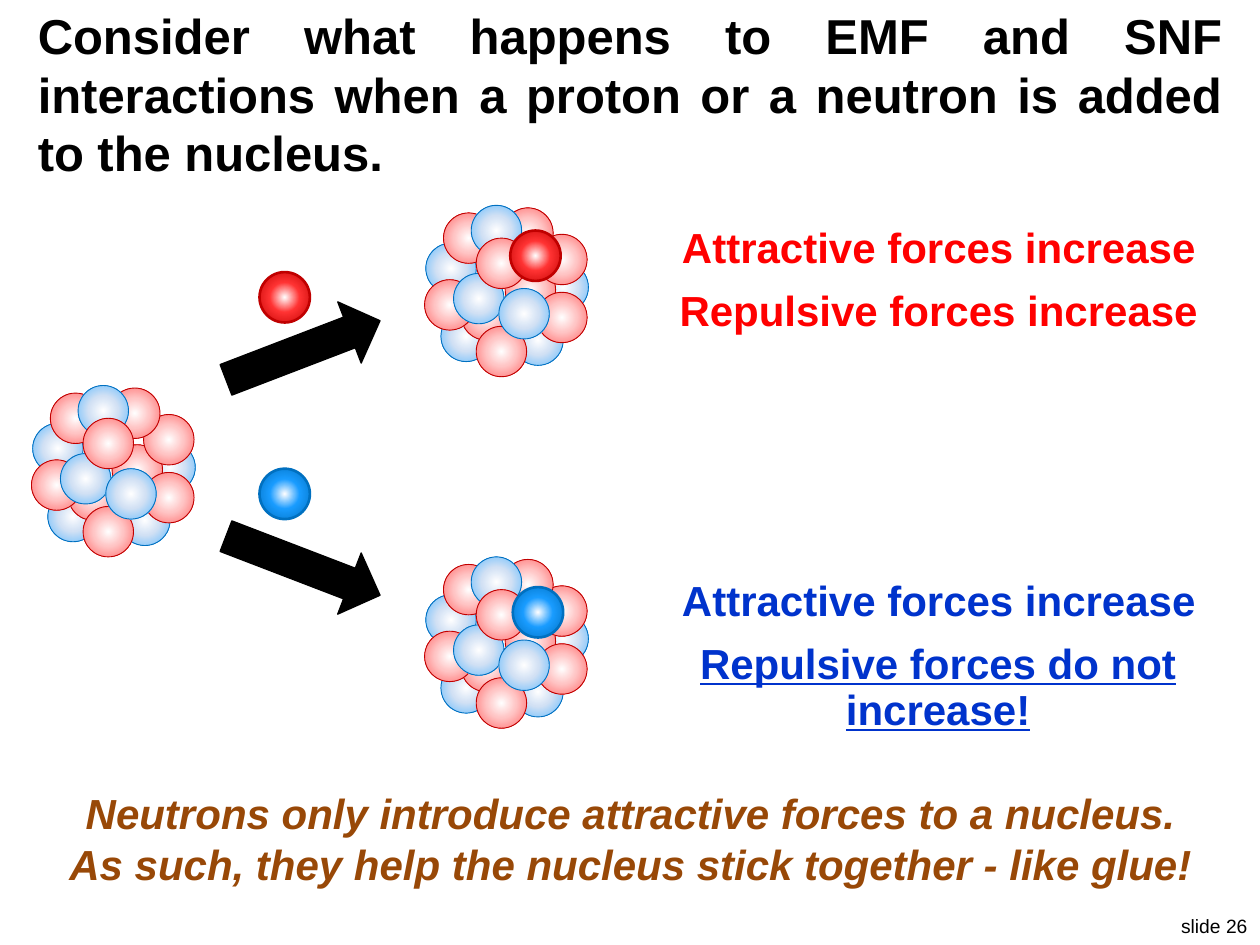
from collections import namedtuple

from lxml.etree import SubElement
from pptx import Presentation
from pptx.dml.color import RGBColor
from pptx.enum.shapes import MSO_SHAPE as Shape
from pptx.enum.text import MSO_ANCHOR as Anchor, MSO_AUTO_SIZE as AutoSize, PP_ALIGN as Align
from pptx.oxml.ns import qn
from pptx.util import Inches, Pt

BLACK = RGBColor(0x00, 0x00, 0x00)
WHITE = RGBColor(0xFF, 0xFF, 0xFF)
RED = RGBColor(0xFF, 0x00, 0x00)
BLUE = RGBColor(0x00, 0x33, 0xCC)
BROWN = RGBColor(0x98, 0x48, 0x07)
CORE_LINE = RGBColor(0x3A, 0x5F, 0x8C)
PROTON_LINE = RGBColor(0xC0, 0x00, 0x00)
NEUTRON_LINE = RGBColor(0x00, 0x70, 0xC0)
PALE_RED = RGBColor(0xFF, 0xC5, 0xC5)
SOFT_RED = RGBColor(0xFF, 0x65, 0x65)
BRIGHT_RED = RGBColor(0xFF, 0x33, 0x33)
PALE_BLUE = RGBColor(0xD2, 0xE1, 0xF4)
SOFT_BLUE = RGBColor(0x59, 0xB8, 0xFF)
BRIGHT_BLUE = RGBColor(0x19, 0x9C, 0xFF)

FONT = "Arial"
DIAMETER = 0.4
LINE_PITCH = Pt(29)

Particle = namedtuple("Particle", "middle edge line width")
PROTON = Particle(PALE_RED, SOFT_RED, PROTON_LINE, 0.5)
NEUTRON = Particle(PALE_BLUE, SOFT_BLUE, NEUTRON_LINE, 0.5)
NEW_PROTON = Particle(BRIGHT_RED, PROTON_LINE, PROTON_LINE, 1.5)
NEW_NEUTRON = Particle(BRIGHT_BLUE, NEUTRON_LINE, NEUTRON_LINE, 1.5)

NUCLEONS = [
    (NEUTRON, [(0.23, 0.3), (0.9, 0.45), (0.7, 0.87), (0.13, 0.84), (0.01, 0.3)]),
    (PROTON, [(0.64, 0.47), (0.29, 0.67), (0.89, 0.23), (0.89, 0.69),
              (0.41, 0.96), (0, 0.59), (0.15, 0.06)]),
    (NEUTRON, [(0.23, 0.54), (0.59, 0.66)]),
    (PROTON, [(0.62, 0.02)]),
    (NEUTRON, [(0.37, 0)]),
    (PROTON, [(0.41, 0.26)]),
]


def add_outline(parent, preset, left, top, width, height, color, weight):
    """Add an unfilled, shadowless preset shape with the given outline."""
    shape = parent.shapes.add_shape(
        preset, Inches(left), Inches(top), Inches(width), Inches(height))
    shape.shadow.inherit = False
    shape.fill.background()
    shape.line.color.rgb = color
    shape.line.width = Pt(weight)
    return shape


def add_particle(parent, left, top, particle):
    """Add a sphere shaded from its white centre to its edge colour."""
    sphere = add_outline(parent, Shape.OVAL, left, top, DIAMETER, DIAMETER,
                         particle.line, particle.width)
    sphere.fill.gradient()
    shading = sphere.fill._xPr.find(qn("a:gradFill"))
    for child in list(shading):
        shading.remove(child)
    stops = SubElement(shading, qn("a:gsLst"))
    for position, color in ((0, WHITE), (42, particle.middle), (100, particle.edge)):
        stop = SubElement(stops, qn("a:gs"), pos=str(position * 1000))
        SubElement(stop, qn("a:srgbClr"), val=str(color))
    circle = SubElement(shading, qn("a:path"), path="circle")
    SubElement(circle, qn("a:fillToRect"), l="50000", t="50000", r="50000", b="50000")


def add_nucleus(slide, left, top, added=None, offset=(0, 0)):
    """Group a cluster of nucleons, with an added particle in front if given."""
    nucleus = slide.shapes.add_group_shape()
    add_outline(nucleus, Shape.OVAL, left + 0.1, top + 0.2, 1, 1, CORE_LINE, 2)
    for particle, places in NUCLEONS:
        for x, y in places:
            add_particle(nucleus, left + x, top + y, particle)
    if added:
        add_particle(nucleus, left + offset[0], top + offset[1], added)


def add_branch(slide, left, top, particle, arrow_drop, angle):
    """Group an incoming particle with the arrow below it."""
    branch = slide.shapes.add_group_shape()
    add_particle(branch, left + 0.31, top, particle)
    arrow = add_outline(branch, Shape.RIGHT_ARROW, left, top + arrow_drop,
                        1.31, 0.52, BLACK, 0.75)
    arrow.fill.solid()
    arrow.fill.fore_color.rgb = BLACK
    arrow.rotation = angle


def format_paragraph(paragraph, size, color, align, pitch=None, **style):
    """Set the alignment, line pitch and run fonts of one paragraph."""
    paragraph.alignment = align
    paragraph.line_spacing = pitch
    for run in paragraph.runs:
        run.font.name = FONT
        run.font.size = Pt(size)
        run.font.color.rgb = color
        for name, value in style.items():
            setattr(run.font, name, value)


def add_label(slide, box, text, color, size=24, align=Align.CENTER,
              pitch=LINE_PITCH, **style):
    """Add an unwrapped text box and return its paragraphs."""
    label = slide.shapes.add_textbox(*map(Inches, box))
    frame = label.text_frame
    frame.word_wrap = False
    frame.auto_size = AutoSize.SHAPE_TO_FIT_TEXT
    frame.text = text
    for paragraph in frame.paragraphs:
        format_paragraph(paragraph, size, color, align, pitch, **style)
    return frame.paragraphs


def add_title(slide, left, top, width, height):
    """Place and format the title placeholder."""
    title = slide.shapes.title
    title.left, title.top = Inches(left), Inches(top)
    title.width, title.height = Inches(width), Inches(height)
    frame = title.text_frame
    frame.text = ("Consider what happens to EMF and SNF interactions "
                  "when a proton or a neutron is added to the nucleus.")
    frame.word_wrap = True
    frame.auto_size = AutoSize.NONE
    frame.vertical_anchor = Anchor.TOP
    paragraph = frame.paragraphs[0]
    format_paragraph(paragraph, 28, BLACK, Align.JUSTIFY, Pt(33.4), bold=True)
    paragraph.space_before = Pt(3)


def add_proton_effects(slide, left, top):
    """State how the forces change when a proton is added."""
    add_label(slide, (left + 0.02, top, 4.32, 0.5),
              "Attractive forces increase", RED, bold=True)
    add_label(slide, (left, top + 0.5, 4.36, 0.5),
              "Repulsive forces increase", RED, bold=True)


def add_neutron_effects(slide, left, top):
    """State how the forces change when a neutron is added."""
    add_label(slide, (left + 0.02, top, 4.32, 0.5),
              "Attractive forces increase", BLUE, bold=True)
    repulsive = add_label(slide, (left + 0.17, top + 0.5, 4.01, 0.87),
                          "Repulsive forces do not\nincrease!", BLUE,
                          bold=True, underline=True)
    repulsive[1].line_spacing = Pt(26)


def build_slide(deck):
    """Lay out the nucleus, its two outcomes and the conclusion."""
    slide = deck.slides.add_slide(deck.slide_layouts[5])
    add_label(slide, (9.25, 7.21, 0.75, 0.29), "slide 26", BLACK,
              size=11, align=Align.RIGHT, pitch=None)
    add_nucleus(slide, 0.25, 3.06)
    add_branch(slide, 1.75, 3.72, NEW_NEUTRON, 0.51, 21)
    add_nucleus(slide, 3.37, 4.42, NEW_NEUTRON, (0.7, 0.24))
    add_nucleus(slide, 3.37, 1.63, NEW_PROTON, (0.68, 0.2))
    add_branch(slide, 1.75, 2.16, NEW_PROTON, 0.36, -21)
    add_title(slide, 0.2, 0, 9.6, 1.53)
    add_proton_effects(slide, 5.27, 1.71)
    add_neutron_effects(slide, 5.27, 4.51)
    add_label(slide, (0.41, 6.2, 9.19, 0.91),
              "Neutrons only introduce attractive forces to a nucleus.\n"
              "As such, they help the nucleus stick together - like glue!",
              BROWN, bold=True, italic=True)


def main():
    """Build and save the presentation."""
    deck = Presentation()
    deck.slide_width, deck.slide_height = Inches(10), Inches(7.5)
    build_slide(deck)
    deck.save("out.pptx")


if __name__ == "__main__":
    main()
